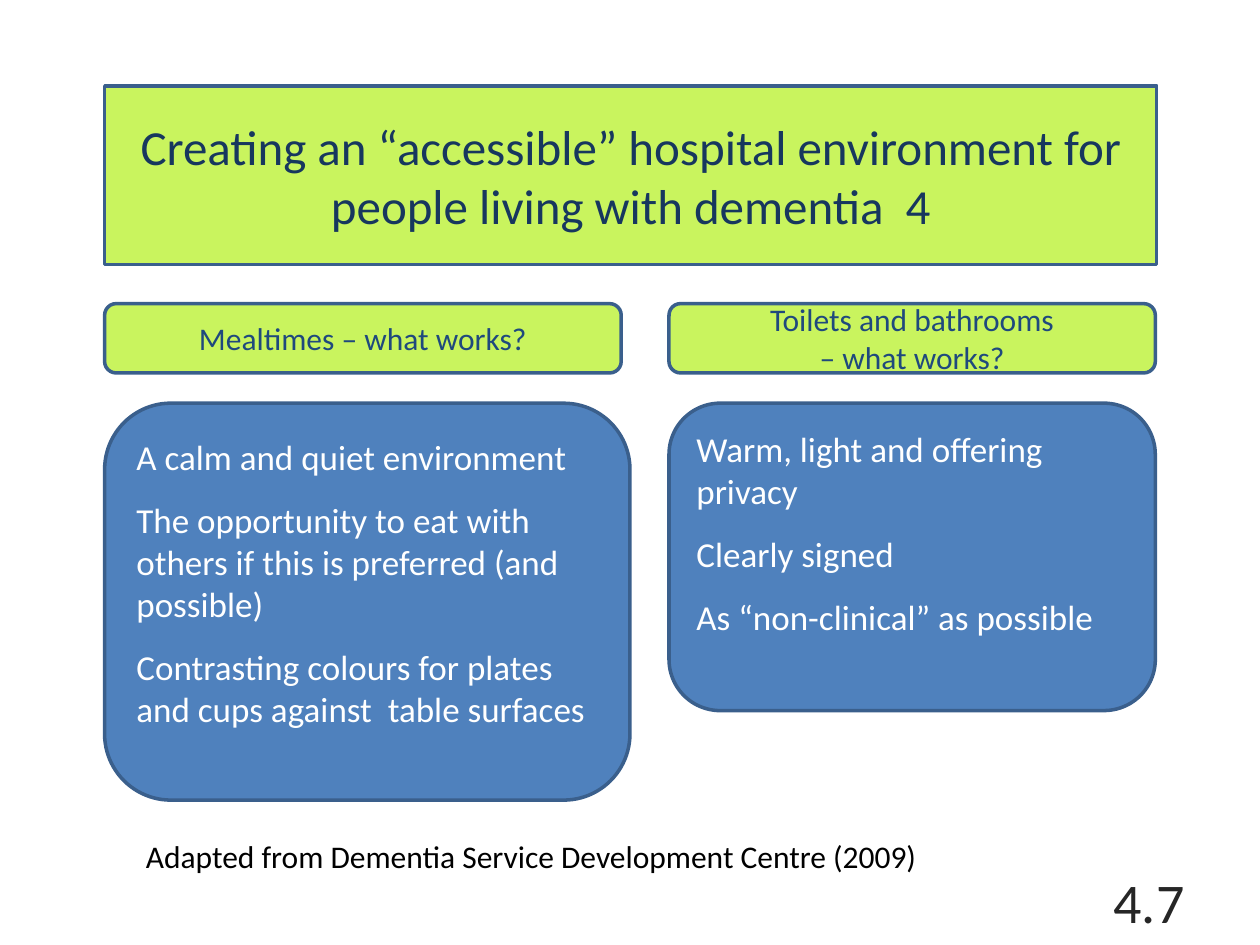
from dataclasses import dataclass

import pptx
import pptx.dml.color
import pptx.enum.shapes
import pptx.enum.text
import pptx.oxml
import pptx.oxml.ns
import pptx.util

Pt = pptx.util.Pt
Align = pptx.enum.text.PP_ALIGN
Anchor = pptx.enum.text.MSO_ANCHOR


@dataclass(frozen=True)
class Theme:
    font: str = "Calibri"
    lime: str = "C9F45E"
    blue: str = "4F81BD"
    outline: str = "3A5F8C"
    title_text: str = "17375E"
    heading_text: str = "1F497D"
    panel_text: str = "FFFFFF"
    source_text: str = "000000"
    number_text: str = "262626"
    title_size: float = 28
    heading_size: float = 18
    panel_size: float = 20
    source_size: float = 18
    number_size: float = 32
    line_width: float = 2


@dataclass(frozen=True)
class Area:
    left: float
    top: float
    width: float
    height: float


@dataclass(frozen=True)
class Column:
    left: float
    heading_width: float
    panel_width: float
    panel_height: float
    panel_inset: float
    heading: tuple[str, ...]
    points: tuple[str, ...]


THEME = Theme()
MARGIN = 59.8
HEADING_TOP, HEADING_HEIGHT = 173.5, 39.6
PANEL_TOP = 230.4

COLUMNS = (
    Column(MARGIN, 295.2, 300.2, 226.8, 7.6,
           ("Mealtimes – what works?",),
           ("A calm and quiet environment",
            "The opportunity to eat with others if this is preferred (and possible)",
            "Contrasting colours for plates and cups against  table surfaces")),
    Column(382.3, 277.9, 277.9, 175.7, 5.6,
           ("Toilets and bathrooms", "– what works?"),
           ("Warm, light and offering privacy",
            "Clearly signed",
            "As “non-clinical” as possible")),
)


def rgb(value: str) -> pptx.dml.color.RGBColor:
    return pptx.dml.color.RGBColor.from_string(value)


def place(box, area: Area) -> None:
    box.left, box.top = Pt(area.left), Pt(area.top)
    box.width, box.height = Pt(area.width), Pt(area.height)


def paint(box, fill: str) -> None:
    box.fill.solid()
    box.fill.fore_color.rgb = rgb(fill)
    box.line.color.rgb = rgb(THEME.outline)
    box.line.width = Pt(THEME.line_width)


def write(box, lines: tuple[str, ...], size: float, color: str,
          align=Align.LEFT, anchor=Anchor.MIDDLE, gap: float = 0) -> None:
    frame = box.text_frame
    frame.word_wrap = True
    frame.auto_size = pptx.enum.text.MSO_AUTO_SIZE.NONE
    frame.vertical_anchor = anchor
    for index, line in enumerate(lines):
        para = frame.add_paragraph() if index else frame.paragraphs[0]
        para.alignment = align
        para.space_before = Pt(gap if index else 0)
        span = para.add_run()
        span.text = line
        span.font.name = THEME.font
        span.font.size = Pt(size)
        span.font.color.rgb = rgb(color)


def add_rounded_box(page, area: Area, fill: str):
    box = page.shapes.add_shape(
        pptx.enum.shapes.MSO_SHAPE.ROUNDED_RECTANGLE, 0, 0, 0, 0)
    place(box, area)
    box.shadow.inherit = False
    paint(box, fill)
    return box


def add_label(page, area: Area, text: str, size: float, color: str,
              align=Align.LEFT, anchor=Anchor.TOP) -> None:
    box = page.shapes.add_textbox(0, 0, 0, 0)
    place(box, area)
    write(box, (text,), size, color, align, anchor)


def format_title(page, area: Area, text: str) -> None:
    title = page.shapes.title
    place(title, area)
    # Give the placeholder a rounded outline
    geometry = pptx.oxml.parse_xml(
        f'<a:prstGeom {pptx.oxml.ns.nsdecls("a")} prst="roundRect"><a:avLst/></a:prstGeom>')
    title.element.spPr.insert(1, geometry)
    paint(title, THEME.lime)
    write(title, (text,), THEME.title_size, THEME.title_text, Align.CENTER)


def add_column(page, column: Column) -> None:
    heading = add_rounded_box(
        page, Area(column.left, HEADING_TOP, column.heading_width, HEADING_HEIGHT), THEME.lime)
    write(heading, column.heading, THEME.heading_size, THEME.heading_text, Align.CENTER)

    panel = add_rounded_box(
        page, Area(column.left, PANEL_TOP, column.panel_width, column.panel_height), THEME.blue)
    write(panel, column.points, THEME.panel_size, THEME.panel_text, anchor=Anchor.TOP, gap=12)
    panel.text_frame.margin_top = Pt(column.panel_inset)


def main() -> None:
    deck = pptx.Presentation()
    deck.slide_width, deck.slide_height = Pt(720), Pt(540)
    page = deck.slides.add_slide(deck.slide_layouts.get_by_name("Title Only"))

    # Title banner
    format_title(page, Area(MARGIN, 49, 601.2, 102.2),
                 "Creating an “accessible” hospital environment for "
                 "people living with dementia  4")

    # Headed panels
    for column in COLUMNS:
        add_column(page, column)

    # Source note and page number
    add_label(page, Area(76.3, 474.5, 561.6, 28.8),
              "Adapted from Dementia Service Development Centre (2009)",
              THEME.source_size, THEME.source_text)
    add_label(page, Area(516.2, 500.4, 167.8, 28.8), "4.7",
              THEME.number_size, THEME.number_text, Align.RIGHT, Anchor.MIDDLE)

    deck.save("out.pptx")


if __name__ == "__main__":
    main()
